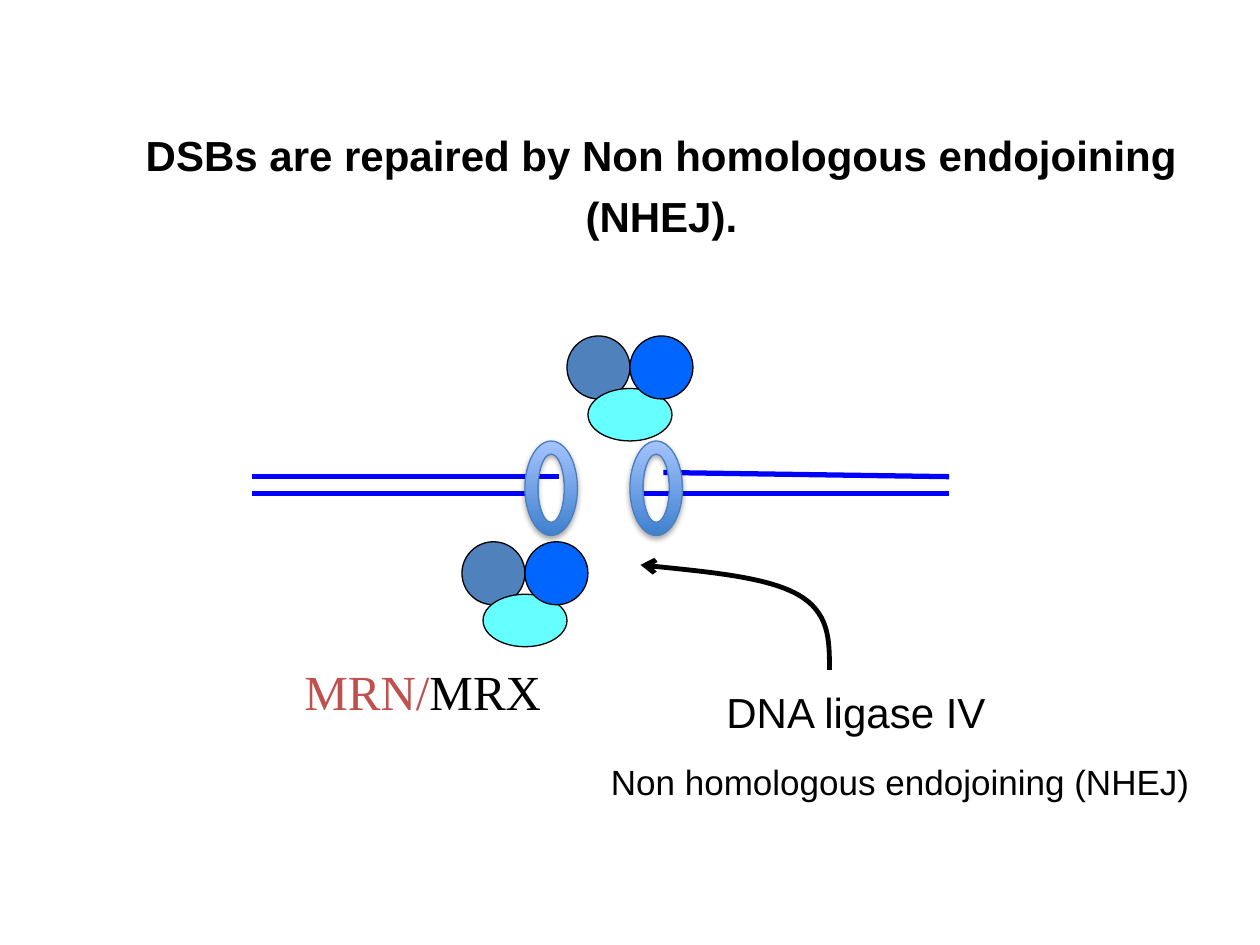
import dataclasses

import lxml.etree
import pptx
import pptx.dml.color
import pptx.enum.shapes
import pptx.enum.text
import pptx.oxml.ns
import pptx.util

SHAPES = pptx.enum.shapes.MSO_SHAPE
ANCHOR = pptx.enum.text.MSO_ANCHOR
ALIGN = pptx.enum.text.PP_ALIGN
qn = pptx.oxml.ns.qn


@dataclasses.dataclass(frozen=True)
class Theme:
    """Hold the colours, fonts and point sizes of the slide."""

    ink: str = "000000"
    accent: str = "C0504D"
    strand: str = "0000FF"
    left_unit: str = "4F81BD"
    right_unit: str = "0066FF"
    base_unit: str = "66FFFF"
    ring_line: str = "4B7EBC"
    ring_stops: tuple = ("3F80CE", "A4C4FF")
    sans: str = "Arial"
    serif: str = "Times New Roman"
    title: int = 24
    protein: int = 28
    caption: int = 20
    thin: float = 0.75
    strand_width: float = 3
    arrow_width: float = 2.75


THEME = Theme()
WIDTH, HEIGHT = 10, 7.5
COLUMNS, ROWS = 120, 90


def rgb(value):
    """Turn a hex string into a colour."""
    return pptx.dml.color.RGBColor.from_string(value)


def grid(column, row):
    """Turn a column and a row into slide lengths."""
    return (pptx.util.Inches(column * WIDTH / COLUMNS),
            pptx.util.Inches(row * HEIGHT / ROWS))


def place(box):
    """Turn a grid box into left, top, width and height."""
    return *grid(*box[:2]), *grid(*box[2:])


def within(box, share):
    """Find the part of a box given by shares of its size."""
    left, top, width, height = box
    return (left + share[0] * width, top + share[1] * height,
            share[2] * width, share[3] * height)


def apply(target, values):
    """Set attributes from a dict of format values."""
    for name, value in values.items():
        setattr(target, name, value)


def outline(shape, colour, width):
    """Give a shape or connector its line."""
    shape.line.color.rgb = rgb(colour)
    shape.line.width = pptx.util.Pt(width)


def add_preset(page, kind, box, line):
    """Add a preset shape without a shadow."""
    shape = page.shapes.add_shape(kind, *place(box))
    shape.shadow.inherit = False
    outline(shape, line, THEME.thin)
    return shape


def add_text(page, box, spans, frame_format, para_format):
    """Add one paragraph of (text, size, font, colour, bold) spans."""
    frame = page.shapes.add_textbox(*place(box)).text_frame
    apply(frame, frame_format)
    para = frame.paragraphs[0]
    apply(para, para_format)
    for text, size, font, colour, bold in spans:
        span = para.add_run()
        span.text = text
        apply(span.font, {"size": pptx.util.Pt(size), "name": font, "bold": bold})
        span.font.color.rgb = rgb(colour)


def add_title(page, box):
    """Add the centred heading."""
    text = "DSBs are repaired by Non homologous endojoining (NHEJ)."
    add_text(page, box, [(text, THEME.title, THEME.sans, THEME.ink, True)],
             {"word_wrap": True, "vertical_anchor": ANCHOR.MIDDLE,
              "margin_bottom": pptx.util.Inches(0.13)},
             {"alignment": ALIGN.CENTER, "line_spacing": pptx.util.Pt(35)})


def add_protein_label(page, box):
    """Add the two-coloured name of the protein complex."""
    sides = ("left", "top", "right", "bottom")
    add_text(page, box,
             [("MRN/", THEME.protein, THEME.serif, THEME.accent, False),
              ("MRX", THEME.protein, THEME.serif, THEME.ink, False)],
             {"word_wrap": False, **{f"margin_{side}": 0 for side in sides}}, {})


def add_caption(page, box, text, size):
    """Add a plain one-line caption."""
    add_text(page, box, [(text, size, THEME.sans, THEME.ink, False)],
             {"word_wrap": False}, {})


def add_strands(page, box):
    """Add the two broken strands of DNA."""
    left, top, width, height = box
    ends = [((0, 0.2), (0.44, 0.2)), ((0, 1), (0.41, 1)),
            ((0.59, 0), (1, 0.2)), ((0.56, 1), (1, 1))]
    for pair in ends:
        points = [grid(left + x * width, top + y * height) for x, y in pair]
        strand = page.shapes.add_connector(
            pptx.enum.shapes.MSO_CONNECTOR.STRAIGHT, *points[0], *points[1])
        outline(strand, THEME.strand, THEME.strand_width)
        lxml.etree.SubElement(strand._element.spPr, qn("a:effectLst"))


def add_complex(page, box):
    """Add a protein complex of three overlapping units."""
    units = [((0, 0, 0.5, 0.6), THEME.left_unit),
             ((1 / 6, 0.5, 2 / 3, 0.5), THEME.base_unit),
             ((0.5, 0, 0.5, 0.6), THEME.right_unit)]
    for share, colour in units:
        unit = add_preset(page, SHAPES.OVAL, within(box, share), THEME.ink)
        unit.fill.solid()
        unit.fill.fore_color.rgb = rgb(colour)


def add_ring(page, box):
    """Add a shaded ring with a soft shadow."""
    ring = add_preset(page, SHAPES.DONUT, box, THEME.ring_line)
    ring.fill.gradient()
    ring.fill.gradient_angle = 90
    for stop, colour in zip(ring.fill.gradient_stops, THEME.ring_stops):
        stop.color.rgb = rgb(colour)
    effects = ring._element.spPr.find(qn("a:effectLst"))
    shadow = lxml.etree.SubElement(
        effects, qn("a:outerShdw"), blurRad="40000", dist="23000",
        dir="5400000", rotWithShape="0")
    colour = lxml.etree.SubElement(shadow, qn("a:srgbClr"), val=THEME.ink)
    lxml.etree.SubElement(colour, qn("a:alpha"), val="35000")


def add_arrow(page, box):
    """Add a curved arrow from the lower right to the upper left."""
    left, top, width, height = box
    shares = [(1, 1), (1, 0.71), (1, 0.45), (0.83, 0.28),
              (0.67, 0.12), (0.33, 0.06), (0, 0)]
    points = [grid(left + x * width, top + y * height) for x, y in shares]
    builder = page.shapes.build_freeform(*points[0])
    builder.add_line_segments(points[1:], close=False)
    arrow = builder.convert_to_shape()
    arrow.shadow.inherit = False
    arrow.fill.background()
    outline(arrow, THEME.ink, THEME.arrow_width)
    lxml.etree.SubElement(arrow.line._get_or_add_ln(), qn("a:tailEnd"), type="arrow")
    segments = list(arrow._element.iter(qn("a:lnTo")))
    for start in range(0, len(segments), 3):
        curve = lxml.etree.Element(qn("a:cubicBezTo"))
        segments[start].addprevious(curve)
        for segment in segments[start:start + 3]:
            curve.append(segment[0])
            segment.getparent().remove(segment)


def build_page(page):
    """Place every region on the page grid."""
    add_strands(page, (24, 45, 66.4, 2))
    for corner in ((44, 51.6), (54, 32)):
        add_complex(page, (*corner, 12, 10))
    add_title(page, (9, 9.2, 108, 16.8))
    add_protein_label(page, (29, 63, 24.7, 5.6))
    add_arrow(page, (61, 53.8, 18, 10))
    add_caption(page, (68, 64.8, 27.4, 6), "DNA ligase IV", THEME.title)
    add_caption(page, (57, 71.8, 61.7, 5.2),
                "Non homologous endojoining (NHEJ)", THEME.caption)
    for column in (50, 60):
        add_ring(page, (column, 42, 5, 9))


def main():
    """Build the deck and save it."""
    deck = pptx.Presentation()
    apply(deck, {"slide_width": pptx.util.Inches(WIDTH),
                 "slide_height": pptx.util.Inches(HEIGHT)})
    build_page(deck.slides.add_slide(deck.slide_layouts[6]))
    deck.save("out.pptx")


if __name__ == "__main__":
    main()
